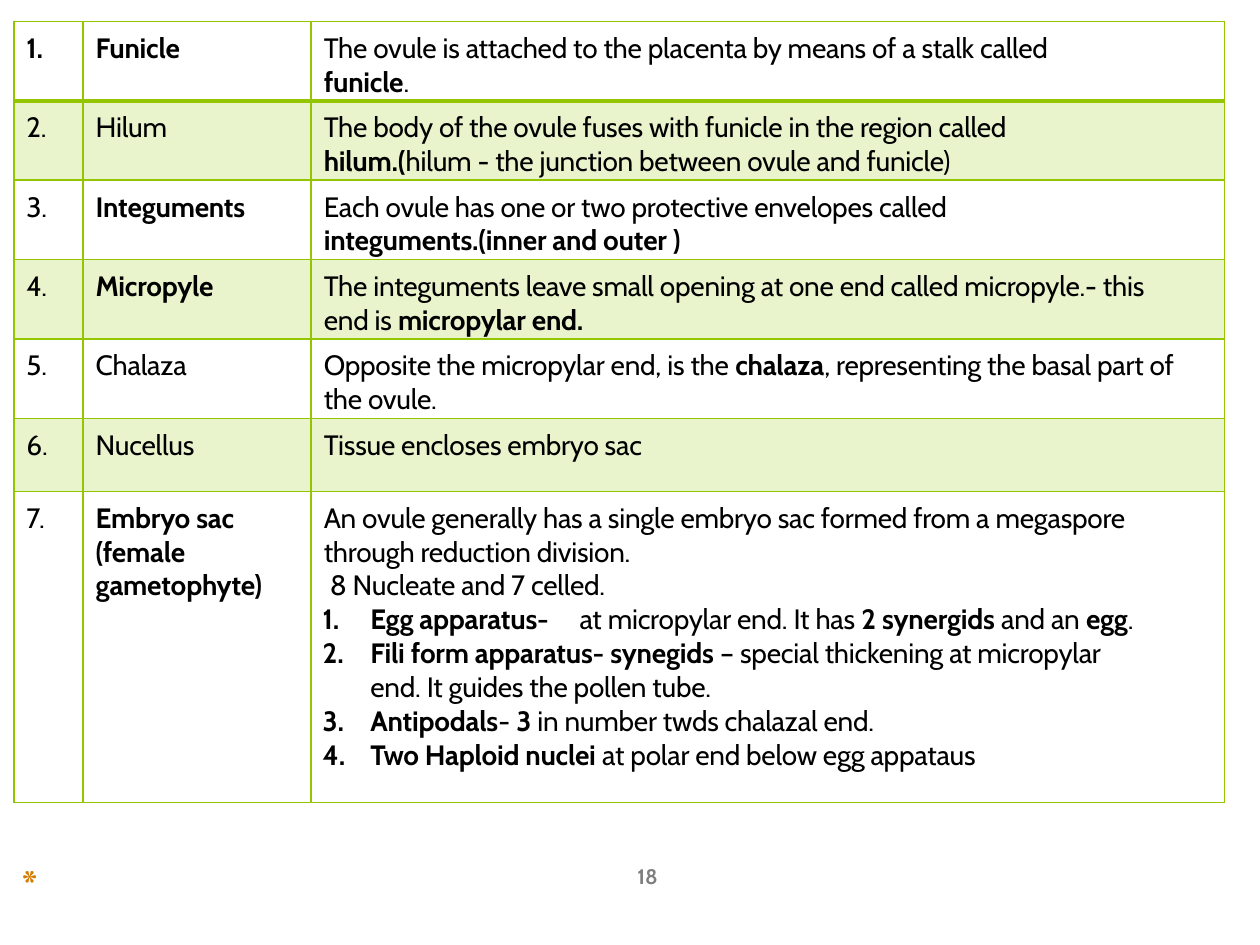
from lxml.etree import SubElement
from pptx import Presentation
from pptx.dml.color import RGBColor
from pptx.enum.text import MSO_ANCHOR, MSO_AUTO_SIZE
from pptx.oxml.ns import qn
from pptx.util import Inches, Pt

COLORS = {
    "text": "000000",
    "border": "93C500",
    "band": "E9F3CC",
    "page": "7E7E7E",
    "star": "D67B00",
}


def write_text(paragraph, text, size=16, font="Cabin", color="text", spacing=-0.1,
               left=0.1, hanging=0, right=0, number_from=None, tab=None):
    """Fill a paragraph; parts between ** marks are bold."""
    properties = paragraph._p.get_or_add_pPr()
    properties.set("marL", str(Inches(left)))
    properties.set("indent", str(-Inches(hanging)))
    properties.set("marR", str(Inches(right)))
    if number_from:
        SubElement(properties, qn("a:buFont"), typeface="+mj-lt")
        SubElement(properties, qn("a:buAutoNum"), type="arabicPeriod",
                   startAt=str(number_from))
    if tab:
        stops = SubElement(properties, qn("a:tabLst"))
        SubElement(stops, qn("a:tab"), pos=str(Inches(tab)), algn="l")
    for index, part in enumerate(text.split("**")):
        if not part:
            continue
        run = paragraph.add_run()
        run.text = part
        run.font.size = Pt(size)
        run.font.name = font
        run.font.bold = index % 2 == 1
        run.font.color.rgb = RGBColor.from_string(COLORS[color])
        run.font._element.set("spc", str(round(spacing * 100)))


def set_borders(cell, widths):
    properties = cell._tc.get_or_add_tcPr()
    for side, width in widths.items():
        line = SubElement(properties, qn(f"a:ln{side}"), w=str(Pt(width)))
        fill = SubElement(line, qn("a:solidFill"))
        SubElement(fill, qn("a:srgbClr"), val=COLORS["border"])


item = {"left": 0.47, "hanging": 0.38}
ovule_parts = [
    ("**1.**", "**Funicle**", [
        ("The ovule is attached to the placenta by means of a stalk called", {}),
        ("**funicle**.", {})]),
    ("2.", "Hilum", [
        ("The body of the ovule fuses with funicle in the region called", {}),
        ("**hilum.(**hilum - the junction between ovule and funicle)", {})]),
    ("3.", "**Integuments**", [
        ("Each ovule has one or two protective envelopes called", {}),
        ("**integuments.(inner and outer )**", {})]),
    ("4.", "**Micropyle**", [
        ("The integuments leave small opening at one end called micropyle.- this "
         "end is **micropylar end.**", {})]),
    ("5.", "Chalaza", [
        ("Opposite the micropylar end, is the **chalaza**, representing the basal "
         "part of the ovule.", {})]),
    ("6.", "Nucellus", [("Tissue encloses embryo sac", {})]),
    ("7.", "**Embryo sac (female gametophyte)**", [
        ("An ovule generally has a single embryo sac formed from a megaspore "
         "through reduction division.", {}),
        (" 8 Nucleate and 7 celled.", {}),
        ("**Egg apparatus-\t**at micropylar end. It has **2 synergids **and an "
         "**egg**.", {**item, "number_from": 1, "tab": 2.13}),
        ("**Fili form apparatus- synegids **– special thickening at micropylar",
         {**item, "number_from": 1}),
        ("end. It guides the pollen tube.", {"left": 0.47}),
        ("**Antipodals**- **3 **in number twds chalazal end.",
         {**item, "number_from": 3}),
        ("**Two Haploid nuclei **at polar end below egg appataus",
         {**item, "number_from": 3})]),
]
column_widths = [0.55, 1.81, 7.25]
row_heights = [0.63] * 5 + [0.58, 2.47]

presentation = Presentation()
presentation.slide_width = Inches(10)
presentation.slide_height = Inches(7.5)
slide = presentation.slides.add_slide(presentation.slide_layouts[6])

footers = [
    ("**18**", (5.05, 6.83, 0.23, 0.23), {"size": 12, "color": "page"}),
    ("*", (0.15, 6.77, 0.2, 0.45), {"size": 25.5, "font": "Cambria", "color": "star"}),
]
for text, place, text_format in footers:
    frame = slide.shapes.add_textbox(*map(Inches, place)).text_frame
    frame.word_wrap = True
    frame.auto_size = MSO_AUTO_SIZE.SHAPE_TO_FIT_TEXT
    frame.margin_left = frame.margin_right = frame.margin_bottom = 0
    frame.margin_top = Inches(0.02)
    write_text(frame.paragraphs[0], text, left=0.01, spacing=0, **text_format)

table = slide.shapes.add_table(
    len(row_heights), len(column_widths), Inches(0.11), Inches(0.17),
    Inches(sum(column_widths)), Inches(sum(row_heights))).table
table.first_row = False
table.horz_banding = False
for column, width in zip(table.columns, column_widths):
    column.width = Inches(width)

for row_index, (number, part_name, description) in enumerate(ovule_parts):
    row = table.rows[row_index]
    row.height = Inches(row_heights[row_index])
    contents = [[(number, {})], [(part_name, {})], description]
    for column_index, (cell, lines) in enumerate(zip(row.cells, contents)):
        cell.margin_left = cell.margin_right = cell.margin_bottom = 0
        cell.margin_top = Inches(0.08)
        cell.vertical_anchor = MSO_ANCHOR.TOP
        set_borders(cell, {"L": 1, "R": 1,
                           "T": 2.25 if row_index == 1 else 1,
                           "B": 2.25 if row_index == 0 else 1})
        if row_index % 2:
            cell.fill.solid()
            cell.fill.fore_color.rgb = RGBColor.from_string(COLORS["band"])
        else:
            cell.fill.background()
        for line_index, (text, text_format) in enumerate(lines):
            frame = cell.text_frame
            paragraph = frame.add_paragraph() if line_index else frame.paragraphs[0]
            write_text(paragraph, text, right=0.35 if column_index == 2 else 0,
                       **text_format)

presentation.save("out.pptx")
